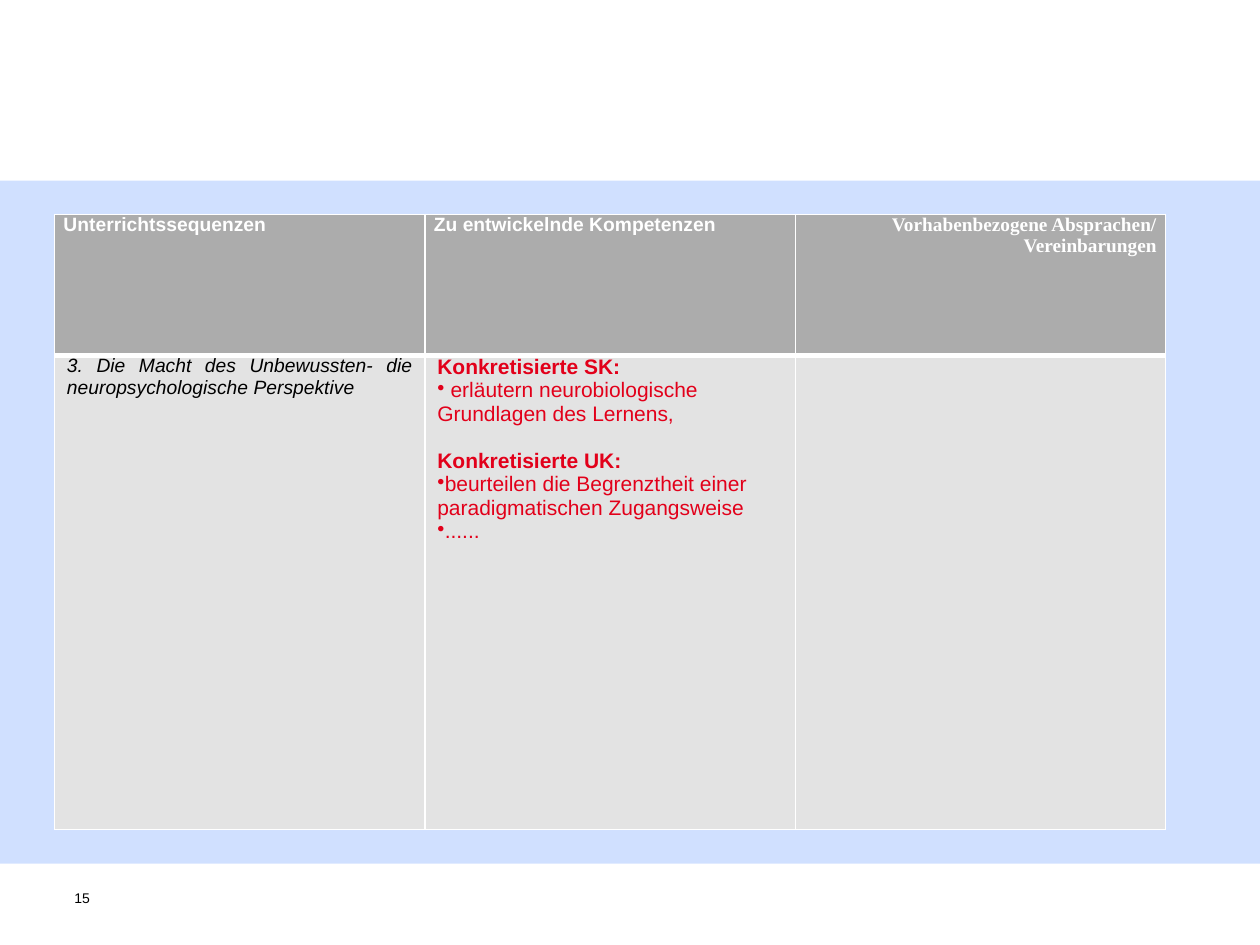
import pptx
import pptx.util
import pptx.oxml
import pptx.dml.color
import pptx.enum.shapes
import pptx.enum.text
from dataclasses import dataclass
from lxml import etree
from pptx.oxml.ns import qn

Cm = pptx.util.Cm
Pt = pptx.util.Pt
ALIGN = pptx.enum.text.PP_ALIGN


@dataclass(frozen=True)
class Theme:
    band: str = "6699FF"
    band_opacity: int = 30
    header_fill: str = "ACACAC"
    body_fill: str = "E3E3E3"
    white: str = "FFFFFF"
    black: str = "000000"
    red: str = "E2001A"
    sans: str = "Arial"
    serif: str = "Times New Roman"
    number_size: int = 8
    text_size: int = 11
    list_size: int = 12
    thin: int = 1
    thick: int = 3


THEME = Theme()

HEADERS = [
    ("Unterrichtssequenzen", THEME.sans, ALIGN.JUSTIFY),
    ("Zu entwickelnde Kompetenzen", THEME.sans, ALIGN.JUSTIFY),
    ("Vorhabenbezogene Absprachen/ Vereinbarungen", THEME.serif, ALIGN.RIGHT),
]
SEQUENCE = "3. Die Macht des Unbewussten- die neuropsychologische Perspektive"
COMPETENCES = [
    ("Konkretisierte SK:", [" erläutern neurobiologische Grundlagen des Lernens,"]),
    ("Konkretisierte UK:",
     ["beurteilen die Begrenztheit einer paradigmatischen Zugangsweise", "......"]),
]


def rgb(value):
    return pptx.dml.color.RGBColor.from_string(value)


def set_font(paragraph, size, color, name=THEME.sans, bold=False, italic=False):
    font = paragraph.font
    font.name, font.size, font.bold, font.italic = name, Pt(size), bold, italic
    font.color.rgb = rgb(color)


def add_bullet(paragraph):
    properties = paragraph._p.get_or_add_pPr()
    properties.set("marL", "0")
    properties.set("indent", "0")
    etree.SubElement(properties, qn("a:buChar"), char="•")


def add_hanging_tab(paragraph, distance):
    properties = paragraph._p.get_or_add_pPr()
    properties.set("marL", str(distance))
    properties.set("indent", str(-distance))
    tabs = etree.SubElement(properties, qn("a:tabLst"))
    etree.SubElement(tabs, qn("a:tab"), pos=str(distance), algn="l")


def format_cell(cell, fill, side_margin, top, bottom):
    """Set margins, white borders (top and bottom widths in points) and fill."""
    cell.margin_left = cell.margin_right = side_margin
    cell.margin_top = cell.margin_bottom = 0
    properties = cell._tc.get_or_add_tcPr()
    widths = {"lnL": THEME.thin, "lnR": THEME.thin, "lnT": top, "lnB": bottom}
    for side, width in widths.items():
        line = etree.SubElement(properties, qn(f"a:{side}"), w=str(Pt(width)))
        line_fill = etree.SubElement(line, qn("a:solidFill"))
        etree.SubElement(line_fill, qn("a:srgbClr"), val=THEME.white)
    cell.fill.solid()
    cell.fill.fore_color.rgb = rgb(fill)


def add_band(slide, left, top, width, height):
    band = slide.shapes.add_shape(
        pptx.enum.shapes.MSO_SHAPE.RECTANGLE, left, top, width, height)
    band.shadow.inherit = False
    band.line.fill.background()
    band.fill.solid()
    band.fill.fore_color.rgb = rgb(THEME.band)
    color = band._element.spPr.find(f".//{qn('a:srgbClr')}")
    etree.SubElement(color, qn("a:alpha"), val=str(THEME.band_opacity * 1000))


def fill_header(row):
    for cell, (text, font_name, alignment) in zip(row.cells, HEADERS):
        format_cell(cell, THEME.header_fill, Cm(0.18), THEME.thin, THEME.thick)
        paragraph = cell.text_frame.paragraphs[0]
        paragraph.text = text
        paragraph.alignment = alignment
        if alignment == ALIGN.RIGHT:
            add_hanging_tab(paragraph, Cm(1.4))
        set_font(paragraph, THEME.text_size, THEME.white, font_name, bold=True)


def fill_competences(text_frame):
    paragraph = text_frame.paragraphs[0]
    for index, (heading, items) in enumerate(COMPETENCES):
        if index:
            paragraph = text_frame.add_paragraph()
            paragraph.space_before = Pt(13.5)
        paragraph.text = heading
        set_font(paragraph, THEME.list_size, THEME.red, bold=True)
        for item in items:
            paragraph = text_frame.add_paragraph()
            paragraph.text = item
            add_bullet(paragraph)
            set_font(paragraph, THEME.list_size, THEME.red)


def add_plan_table(slide, left, top, width, height):
    header_height = Cm(2.84)
    table = slide.shapes.add_table(2, len(HEADERS), left, top, width, height).table
    for column in table.columns:
        column.width = width // len(HEADERS)
    header, body = table.rows
    header.height, body.height = header_height, height - header_height
    fill_header(header)

    for cell in body.cells:
        format_cell(cell, THEME.body_fill, Cm(0.25), THEME.thick, THEME.thin)
    sequence_cell, competence_cell, _ = body.cells
    paragraph = sequence_cell.text_frame.paragraphs[0]
    paragraph.text = SEQUENCE
    paragraph.alignment = ALIGN.JUSTIFY
    set_font(paragraph, THEME.text_size, THEME.black, italic=True)
    fill_competences(competence_cell.text_frame)


def add_page_number(slide, left, top, width, height):
    text_frame = slide.shapes.add_textbox(left, top, width, height).text_frame
    text_frame.word_wrap = True
    text_frame.margin_left = text_frame.margin_right = 0
    text_frame.margin_top = text_frame.margin_bottom = 0
    paragraph = text_frame.paragraphs[0]
    paragraph.text = "15"
    set_font(paragraph, THEME.number_size, THEME.black)


def main():
    presentation = pptx.Presentation()
    presentation.slide_width, presentation.slide_height = Cm(25.4), Cm(19.05)
    slide = presentation.slides.add_slide(presentation.slide_layouts[6])
    add_band(slide, 0, Cm(3.64), presentation.slide_width, Cm(13.77))
    add_page_number(slide, Cm(1.5), Cm(17.93), Cm(0.81), Cm(0.94))
    add_plan_table(slide, Cm(1.1), Cm(4.32), Cm(22.4), Cm(12.4))
    presentation.save("out.pptx")


if __name__ == "__main__":
    main()
